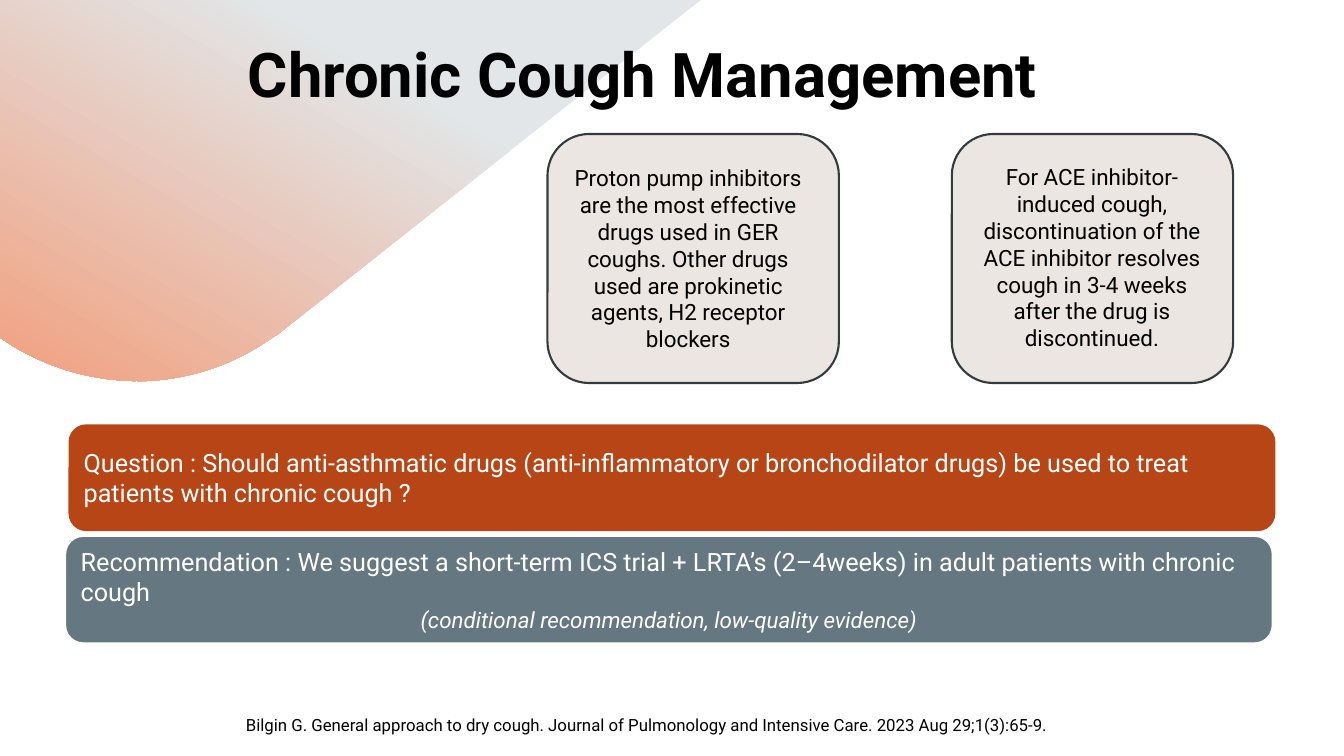
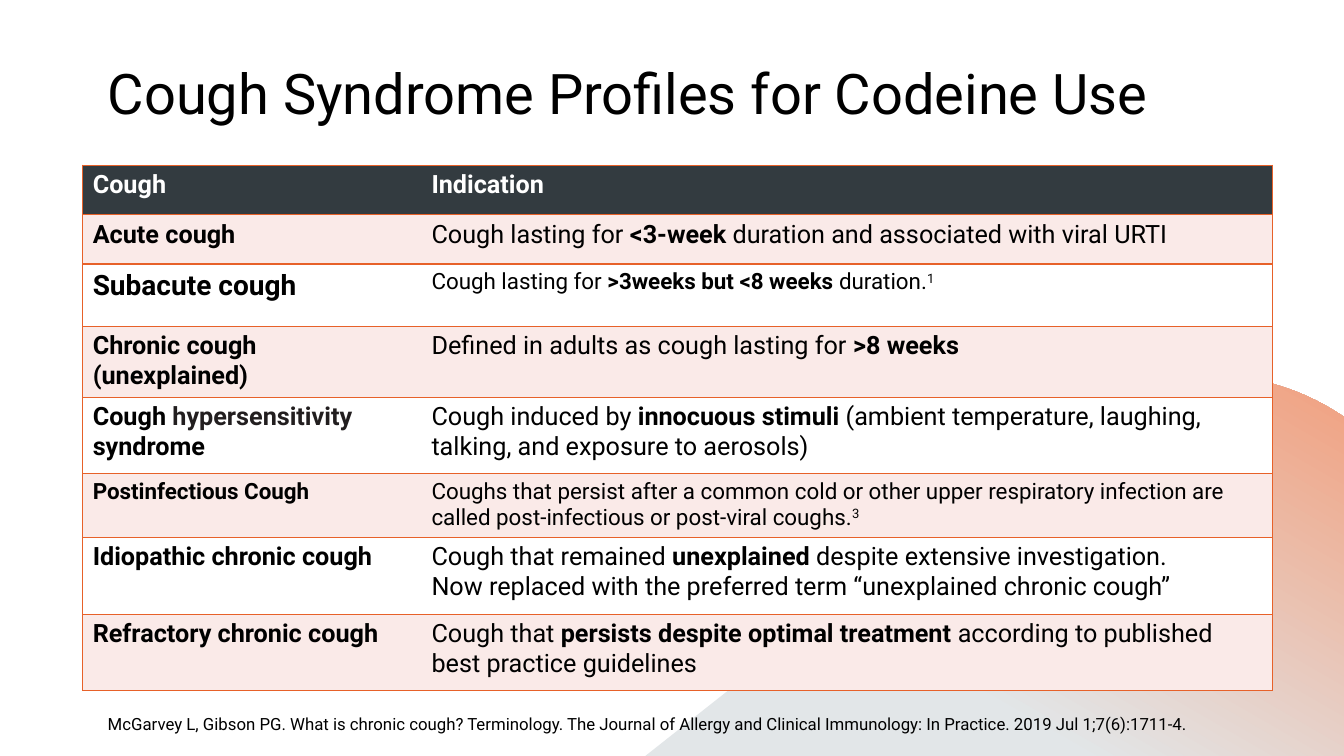
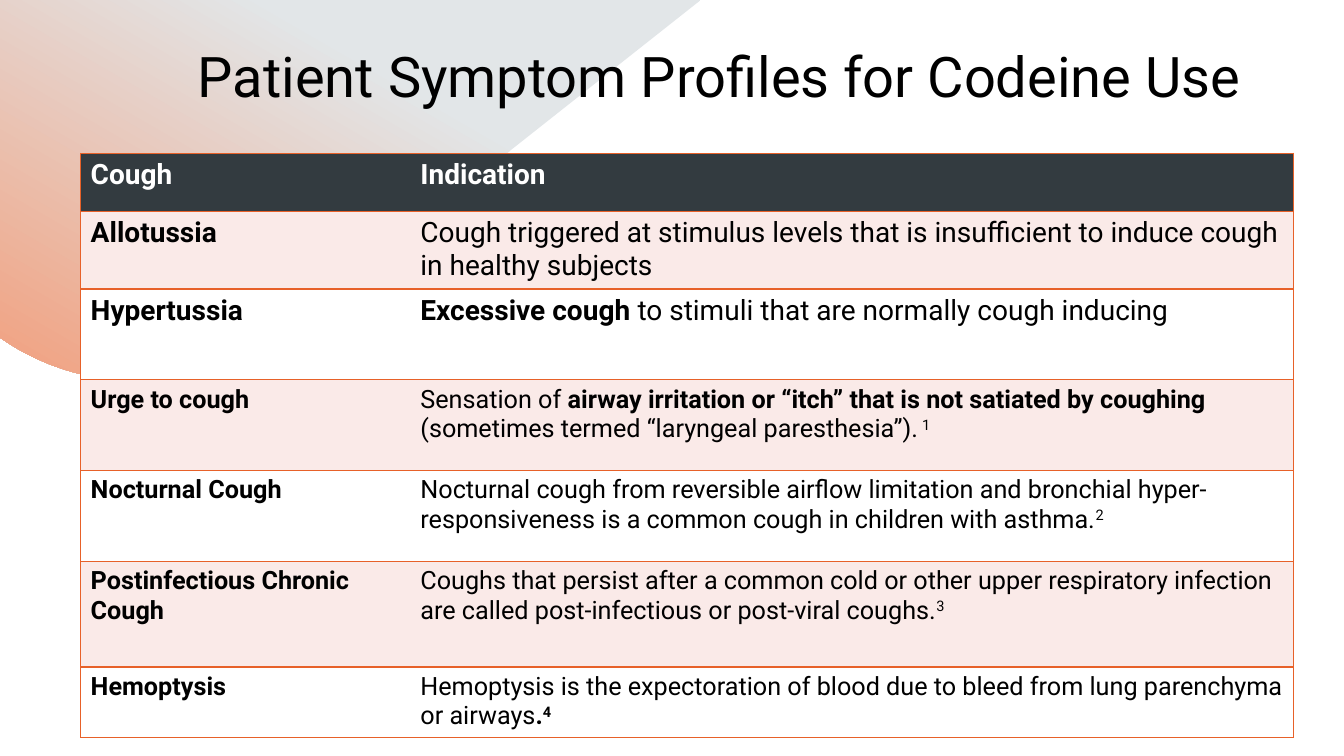
from dataclasses import dataclass
from math import comb

from lxml import etree
from pptx import Presentation
from pptx.dml.color import RGBColor
from pptx.enum.shapes import MSO_SHAPE
from pptx.enum.text import MSO_ANCHOR as ANCHOR, PP_ALIGN as ALIGN
from pptx.oxml.ns import qn
from pptx.util import Inches, Pt


@dataclass(frozen=True)
class Theme:
    font: str = "Roboto"
    black: str = "000000"
    ink: str = "221E1F"
    white: str = "FFFFFF"
    slate: str = "333B40"
    steel: str = "657780"
    rust: str = "B74515"
    orange: str = "E76129"
    blush: str = "FAEAE8"
    brown: str = "835B48"
    mist: str = "E2E6E8"
    peach: str = "F1A07F"
    main_title: int = 44
    title: int = 40
    large: int = 20
    body: int = 18
    small: int = 16
    source: int = 12


theme = Theme()
rgb = RGBColor.from_string


def write(frame, paragraphs, size, color=theme.black, align=ALIGN.LEFT, spacing=None):
    """Fill a text frame; a run is (text, marks), marks out of bold, italic, sup, ink, small."""
    frame.word_wrap = True
    for index, runs in enumerate(paragraphs):
        paragraph = frame.add_paragraph() if index else frame.paragraphs[0]
        paragraph.alignment = align
        paragraph.line_spacing = spacing
        for text, marks in runs:
            run = paragraph.add_run()
            run.text = text
            run.font.name = theme.font
            run.font.size = Pt(theme.small if "small" in marks else size)
            run.font.bold = "bold" in marks
            run.font.italic = "italic" in marks
            run.font.color.rgb = rgb(theme.ink if "ink" in marks else color)
            if "sup" in marks:
                run.font._element.set("baseline", "30000")


def add_text(slide, box, text, size, marks="", anchor=ANCHOR.TOP, **style):
    frame = slide.shapes.add_textbox(*map(Inches, box)).text_frame
    frame.vertical_anchor = anchor
    write(frame, [[(text, marks)]], size, **style)


prs = Presentation()
prs.slide_width, prs.slide_height = Inches(13.33), Inches(7.5)
management, syndromes, symptoms = [
    prs.slides.add_slide(prs.slide_layouts[6]) for _ in range(3)
]

# Corner sweep, top left or turned half round to the bottom right
outline = [(0, 0), (6.95, 0), (2.75, 3.32), (2.7, 3.35)]
for controls in (
    [(2.32, 3.62), (1.89, 3.76), (1.45, 3.78)],
    [(1.41, 3.78), (1.36, 3.78), (1.32, 3.78)],
    [(0.88, 3.77), (0.44, 3.64), (0.06, 3.39)],
):
    curve = [outline[-1], *controls]
    for step in range(1, 21):
        t = step / 20
        weights = [comb(3, i) * t**i * (1 - t) ** (3 - i) for i in range(4)]
        outline.append(tuple(
            sum(w * point[axis] for w, point in zip(weights, curve)) for axis in (0, 1)
        ))
outline.append((0, 3.35))

for slide, turned in ((management, False), (syndromes, True), (symptoms, False)):
    points = [
        (Inches(13.35 - x), Inches(7.5 - y)) if turned else (Inches(x), Inches(y))
        for x, y in outline
    ]
    builder = slide.shapes.build_freeform(*points[0])
    builder.add_line_segments(points[1:])
    sweep = builder.convert_to_shape()
    sweep.shadow.inherit = False
    sweep.line.fill.background()
    sweep.fill.gradient()
    sweep.fill.gradient_angle = 60 if turned else 240
    for stop, position, color in zip(
        sweep.fill.gradient_stops, (0.32, 1), (theme.mist, theme.peach)
    ):
        stop.position = position
        stop.color.rgb = rgb(color)

# Titles and sources
add_text(management, (2.36, 0.39, 9.66, 1.18), "Chronic Cough Management",
         theme.main_title, "bold", spacing=0.9)
add_text(syndromes, (0.97, 0.27, 11.65, 1.37), "Cough Syndrome Profiles for Codeine Use",
         theme.title, anchor=ANCHOR.MIDDLE, spacing=0.9)
add_text(symptoms, (1.23, 0.44, 11.17, 1.02), "Patient Symptom Profiles for Codeine Use",
         theme.title, align=ALIGN.RIGHT, spacing=0.9)
add_text(management, (2.34, 7.04, 8.59, 0.31),
         "Bilgin G. General approach to dry cough. Journal of Pulmonology and Intensive Care. "
         "2023 Aug 29;1(3):65-9.", theme.source)
add_text(syndromes, (0.97, 7.03, 11.65, 0.3),
         "McGarvey L, Gibson PG. What is chronic cough? Terminology. The Journal of Allergy and "
         "Clinical Immunology: In Practice. 2019 Jul 1;7(6):1711-4.", theme.source)

# Management: question and recommendation
for left, top, color, border, paragraphs in (
    (0.68, 4.21, theme.rust, None, [
        "Question : Should anti-asthmatic drugs (anti-inflammatory or bronchodilator drugs) "
        "be used to treat patients with chronic cough ?",
    ]),
    (0.65, 5.32, theme.steel, theme.white, [
        "Recommendation : We suggest a short-term ICS trial + LRTA’s (2–4weeks) in adult "
        "patients with chronic cough",
        "(conditional recommendation, low-quality evidence)",
    ]),
):
    banner = management.shapes.add_shape(
        MSO_SHAPE.ROUNDED_RECTANGLE, Inches(left), Inches(top), Inches(11.97), Inches(1.06)
    )
    banner.shadow.inherit = False
    banner.fill.solid()
    banner.fill.fore_color.rgb = rgb(color)
    if border:
        banner.line.color.rgb = rgb(border)
        banner.line.width = Pt(1)
    else:
        banner.line.fill.background()
    banner.text_frame.vertical_anchor = ANCHOR.MIDDLE
    write(banner.text_frame,
          [[(text, "small italic" if index else "")] for index, text in enumerate(paragraphs)],
          theme.body, theme.white)
    for grade in banner.text_frame.paragraphs[1:]:
        grade.alignment = ALIGN.CENTER

# Management: drug cards
for left, width, text_box, advice in (
    (5.43, 2.89, (5.52, 1.58, 2.61, 1.99),
     "Proton pump inhibitors are the most effective drugs used in GER coughs. "
     "Other drugs used are prokinetic agents, H2 receptor blockers"),
    (9.44, 2.79, (9.54, 1.57, 2.58, 1.99),
     "For ACE inhibitor-induced cough, discontinuation of the ACE inhibitor resolves cough "
     "in 3-4 weeks after the drug is discontinued."),
):
    card = management.shapes.add_shape(
        MSO_SHAPE.ROUNDED_RECTANGLE, Inches(left), Inches(1.33), Inches(width), Inches(2.47)
    )
    card.shadow.inherit = False
    card.fill.solid()
    card.fill.fore_color.rgb = rgb(theme.brown)
    tint = card._element.spPr.find(qn("a:solidFill"))[0]
    etree.SubElement(tint, qn("a:alpha"), val="15000")
    card.line.color.rgb = rgb(theme.slate)
    card.line.width = Pt(1.5)
    add_text(management, text_box, advice, theme.small, align=ALIGN.CENTER)

# Profile tables: height, label size, indication size, label runs, indication paragraphs
large, body, small = theme.large, theme.body, theme.small
postinfectious = [[
    ("Coughs that persist after a common cold or other upper respiratory infection are "
     "called post-infectious or post-viral coughs.", ""),
    ("3", "sup"),
]]
syndrome_rows = [
    (0.49, body, body, [("Cough", "bold")], [[("Indication", "bold")]]),
    (0.49, body, body, [("Acute cough", "bold")], [[
        ("Cough lasting for ", ""), ("<3-week ", "bold"),
        ("duration and associated with viral URTI", "")]]),
    (0.62, large, small, [("Subacute cough", "bold")], [[
        ("Cough lasting for ", ""), (">3weeks but <8 weeks ", "bold"),
        ("duration.", ""), ("1", "sup")]]),
    (0.69, body, body, [("Chronic cough (unexplained)", "bold")], [[
        ("Defined in adults as cough lasting for ", ""), (">8 weeks", "bold")]]),
    (0.76, body, body,
     [("Cough ", "bold"), ("hypersensitivity", "bold ink"), (" syndrome", "bold")], [[
        ("Cough induced by ", ""), ("innocuous stimuli ", "bold"),
        ("(ambient temperature, laughing, talking, and exposure to aerosols)", "")]]),
    (0.62, small, small, [("Postinfectious Cough", "bold")], postinfectious),
    (0.76, body, body, [("Idiopathic chronic cough", "bold")], [
        [("Cough that remained ", ""), ("unexplained", "bold"),
         (" despite extensive investigation.", "")],
        [("Now replaced with the preferred term “unexplained chronic cough”", "")]]),
    (0.76, body, body, [("Refractory chronic cough", "bold")], [[
        ("Cough that ", ""), ("persists despite optimal treatment ", "bold"),
        ("according to published best practice guidelines", "")]]),
]
symptom_rows = [
    (0.58, large, large, [("Cough", "bold")], [[("Indication", "bold")]]),
    (0.76, large, large, [("Allotussia", "bold")], [[
        ("Cough triggered at stimulus levels that is insufficient to induce cough in "
         "healthy subjects", "")]]),
    (0.9, large, large, [("Hypertussia", "bold")], [[
        ("Excessive cough ", "bold"), ("to stimuli that are normally cough inducing", "")]]),
    (0.9, body, body, [("Urge to cough", "bold")], [[
        ("Sensation of ", ""),
        ("airway irritation or “itch” that is not satiated by coughing", "bold"),
        (" (sometimes termed “laryngeal paresthesia”).", ""), (" 1", "sup")]]),
    (0.9, body, body, [("Nocturnal Cough", "bold")], [[
        ("Nocturnal cough from reversible airflow limitation and bronchial "
         "hyper-responsiveness is a common cough in children with asthma.", ""),
        ("2", "sup")]]),
    (1.05, body, body, [("Postinfectious Chronic Cough", "bold")], postinfectious),
    (0.69, body, body, [("Hemoptysis", "bold")], [[
        ("Hemoptysis is the expectoration of blood due to bleed from lung parenchyma or "
         "airways", ""), (".", "bold"), ("4", "bold sup")]]),
]

for slide, left, top, widths, rows in (
    (syndromes, 0.82, 1.64, (3.36, 8.44), syndrome_rows),
    (symptoms, 0.8, 1.52, (3.27, 8.76), symptom_rows),
):
    profile = slide.shapes.add_table(
        len(rows), 2, Inches(left), Inches(top),
        Inches(sum(widths)), Inches(sum(row[0] for row in rows)),
    ).table
    profile.first_row = profile.horz_banding = False
    for column, width in zip(profile.columns, widths):
        column.width = Inches(width)
    for row_index, (height, label_size, text_size, label, indication) in enumerate(rows):
        profile.rows[row_index].height = Inches(height)
        if row_index == 0:
            fill, color = theme.slate, theme.white
        else:
            fill, color = (theme.blush if row_index % 2 else theme.white), theme.black
        for column_index, (paragraphs, size) in enumerate(
            (([label], label_size), (indication, text_size))
        ):
            cell = profile.cell(row_index, column_index)
            inner_side = "lnL" if column_index else "lnR"
            properties = cell._tc.get_or_add_tcPr()
            for side in ("lnL", "lnR", "lnT", "lnB"):
                border = etree.SubElement(properties, qn(f"a:{side}"), w=str(Pt(1)))
                if side == inner_side:
                    etree.SubElement(border, qn("a:noFill"))
                else:
                    paint = etree.SubElement(border, qn("a:solidFill"))
                    etree.SubElement(paint, qn("a:srgbClr"), val=theme.orange)
            cell.fill.solid()
            cell.fill.fore_color.rgb = rgb(fill)
            write(cell.text_frame, paragraphs, size, color)

prs.save("out.pptx")
